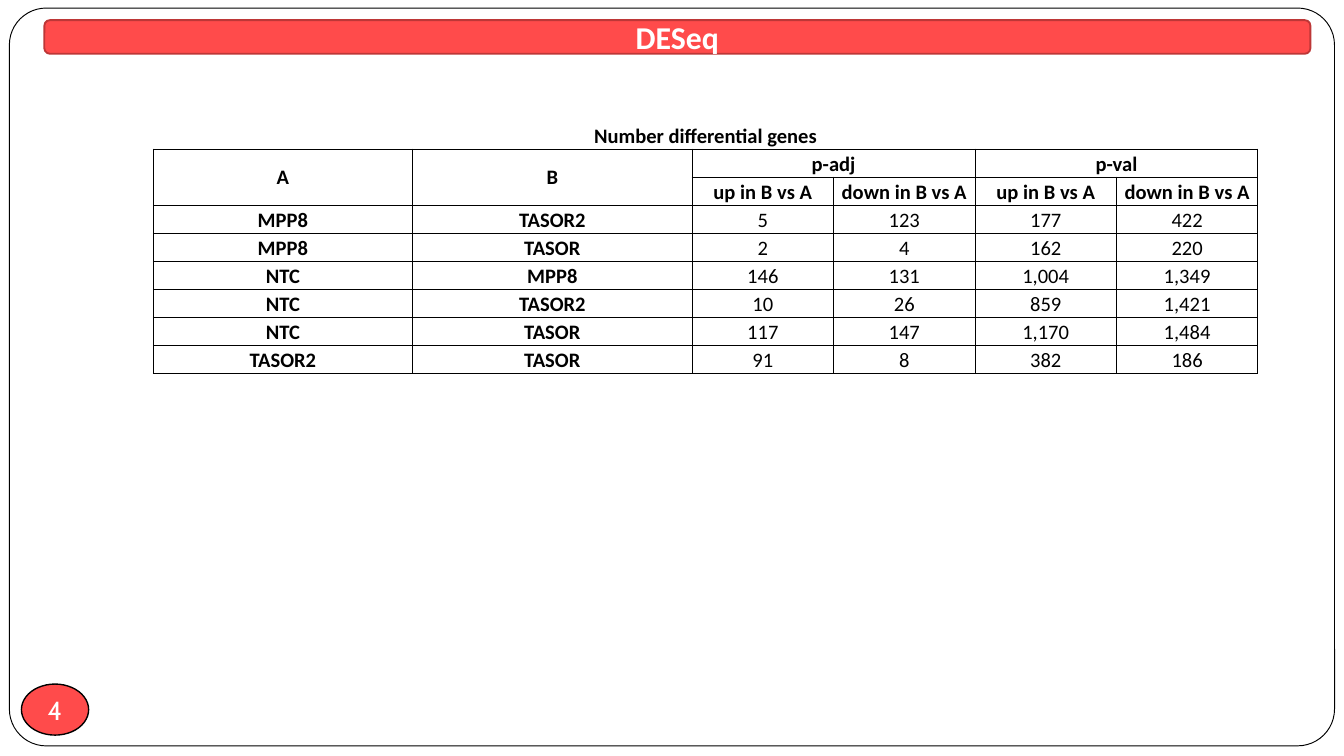
from dataclasses import dataclass

from lxml.etree import SubElement
from pptx import Presentation
from pptx.dml.color import RGBColor
from pptx.enum.shapes import MSO_SHAPE
from pptx.enum.text import MSO_ANCHOR, PP_ALIGN
from pptx.oxml.ns import qn
from pptx.util import Inches, Pt


@dataclass(frozen=True)
class Theme:
    white: str = "FFFFFF"
    black: str = "000000"
    red: str = "FF4B4B"
    dark_red: str = "BD3737"
    heading_font: str = "Calibri"
    number_font: str = "Cabin"
    heading_size: int = 17
    number_size: int = 14
    table_size: int = 11
    border_width: float = 0.5


theme = Theme()


def write(frame, text, color, **font_format):
    paragraph = frame.paragraphs[0]
    paragraph.alignment = PP_ALIGN.CENTER
    run = paragraph.add_run()
    run.text = text
    run.font.color.rgb = RGBColor.from_string(color)
    for name, value in font_format.items():
        setattr(run.font, name, value)


def set_borders(cell, visible_sides):
    """Draw the given sides (letters of LRTB) and clear the others."""
    properties = cell._tc.get_or_add_tcPr()
    for side in "LRTB":
        border = SubElement(properties, qn(f"a:ln{side}"), w=str(Pt(theme.border_width)))
        if side in visible_sides:
            fill = SubElement(border, qn("a:solidFill"))
            SubElement(fill, qn("a:srgbClr"), val=theme.black)
        else:
            SubElement(border, qn("a:noFill"))


presentation = Presentation()
presentation.slide_width = Inches(10)
presentation.slide_height = presentation.slide_width * 9 // 16
slide = presentation.slides.add_slide(presentation.slide_layouts[6])

# Frame, page number and heading, from back to front
panels = []
for preset, box, fill, line, width in (
    (MSO_SHAPE.ROUNDED_RECTANGLE, (0.07, 0.06, 9.86, 5.49), theme.white, theme.black, 0.5),
    (MSO_SHAPE.OVAL, (0.16, 5.09, 0.5, 0.38), theme.red, theme.black, 0.75),
    (MSO_SHAPE.ROUNDED_RECTANGLE, (0.33, 0.15, 9.42, 0.25), theme.red, theme.dark_red, 1),
):
    panel = slide.shapes.add_shape(preset, *map(Inches, box))
    panel.shadow.inherit = False
    panel.fill.solid()
    panel.fill.fore_color.rgb = RGBColor.from_string(fill)
    panel.line.color.rgb = RGBColor.from_string(line)
    panel.line.width = Pt(width)
    panels.append(panel)

frame, page_number, heading = panels
frame.adjustments[0] = 0.05

number_format = dict(margin_left=0, margin_right=0, margin_top=0, margin_bottom=0,
                     word_wrap=False, vertical_anchor=MSO_ANCHOR.MIDDLE)
for name, value in number_format.items():
    setattr(page_number.text_frame, name, value)
write(page_number.text_frame, "4", theme.white,
      name=theme.number_font, size=Pt(theme.number_size))

heading.text_frame.vertical_anchor = MSO_ANCHOR.MIDDLE
write(heading.text_frame, "DESeq", theme.white,
      name=theme.heading_font, size=Pt(theme.heading_size), bold=True)

# Table of differential genes; None marks a cell covered by a merge
directions = ("up in B vs A", "down in B vs A")
gene_rows = (
    ("Number differential genes", None, None, None, None, None),
    ("A", "B", "p-adj", None, "p-val", None),
    (None, None, *directions, *directions),
    ("MPP8", "TASOR2", "5", "123", "177", "422"),
    ("MPP8", "TASOR", "2", "4", "162", "220"),
    ("NTC", "MPP8", "146", "131", "1,004", "1,349"),
    ("NTC", "TASOR2", "10", "26", "859", "1,421"),
    ("NTC", "TASOR", "117", "147", "1,170", "1,484"),
    ("TASOR2", "TASOR", "91", "8", "382", "186"),
)
merges = (((0, 0), (0, 5)), ((1, 0), (2, 0)), ((1, 1), (2, 1)),
          ((1, 2), (1, 3)), ((1, 4), (1, 5)))
table_width, table_height = 8.22, 1.88
name_widths = (1.93, 2.08)
count_columns = 4
count_width = (table_width - sum(name_widths)) / count_columns
column_widths = name_widths + (count_width,) * count_columns
header_rows = 3

genes = slide.shapes.add_table(
    len(gene_rows), len(column_widths),
    Inches(1.14), Inches(0.9), Inches(table_width), Inches(table_height)).table
genes.first_row = genes.horz_banding = False
for column, width in zip(genes.columns, column_widths):
    column.width = Inches(width)
for row in genes.rows:
    row.height = Inches(table_height / len(gene_rows))
for first, last in merges:
    genes.cell(*first).merge(genes.cell(*last))

cell_format = dict(margin_left=Inches(0.01), margin_right=Inches(0.01),
                   margin_top=Inches(0.01), margin_bottom=0)
for row_index, values in enumerate(gene_rows):
    for column_index, value in enumerate(values):
        cell = genes.cell(row_index, column_index)
        set_borders(cell, "B" if row_index == 0 else "LRTB")
        cell.fill.background()
        for name, setting in cell_format.items():
            setattr(cell, name, setting)
        spans_rows = cell.is_merge_origin and cell.span_height > 1
        cell.vertical_anchor = MSO_ANCHOR.MIDDLE if spans_rows else MSO_ANCHOR.BOTTOM
        if value is None:
            cell.text_frame.paragraphs[0].font.size = Pt(theme.table_size)
        else:
            write(cell.text_frame, value, theme.black,
                  name=theme.heading_font, size=Pt(theme.table_size),
                  bold=row_index < header_rows or column_index < len(name_widths))

presentation.save("out.pptx")
